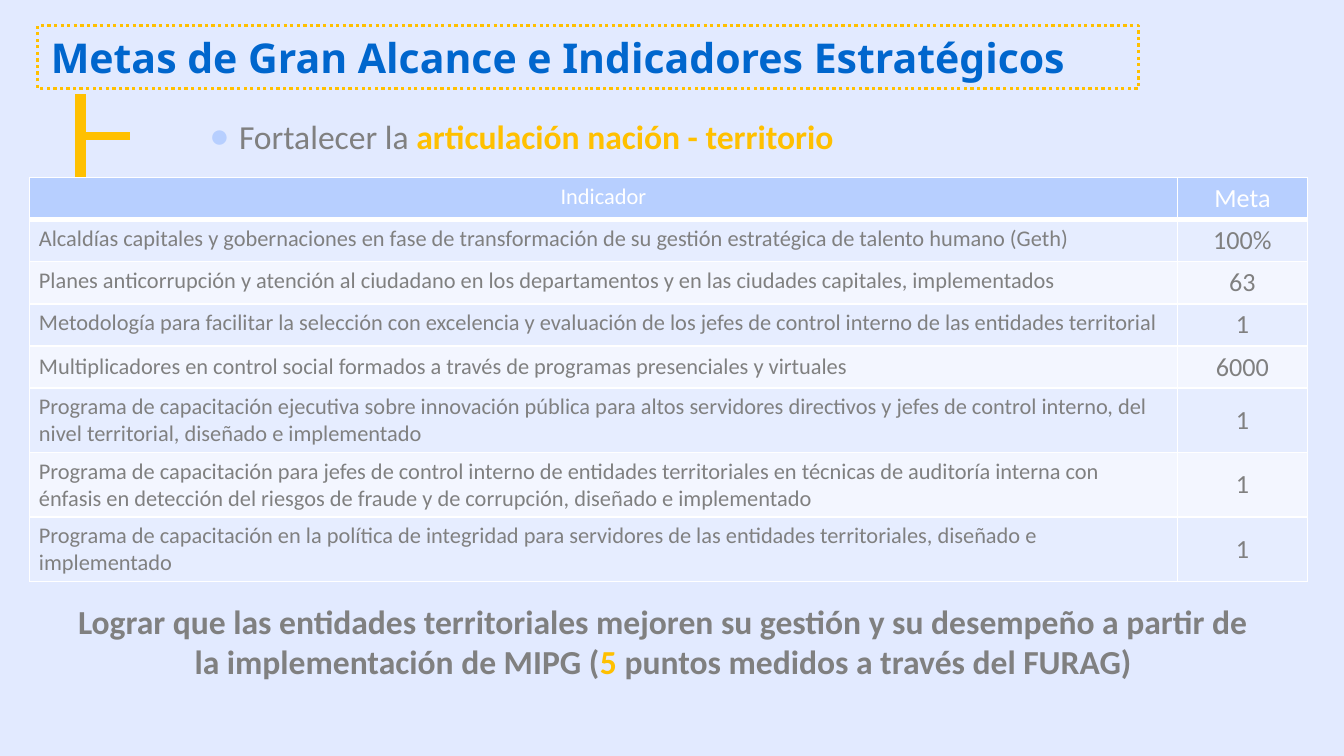
from lxml.etree import SubElement
from pptx import Presentation
from pptx.dml.color import RGBColor
from pptx.enum.dml import MSO_LINE
from pptx.enum.shapes import MSO_CONNECTOR, MSO_SHAPE
from pptx.enum.text import MSO_ANCHOR, MSO_AUTO_SIZE, PP_ALIGN
from pptx.oxml.ns import qn
from pptx.util import Inches, Pt

BACKGROUND = RGBColor(0xE2, 0xEA, 0xFF)
HEADER = RGBColor(0xB7, 0xCF, 0xFF)
BANDS = (RGBColor(0xE6, 0xED, 0xFF), RGBColor(0xF3, 0xF6, 0xFF))
GOLD = RGBColor(0xFF, 0xC0, 0x00)
GRAY = RGBColor(0x80, 0x80, 0x80)
BLUE = RGBColor(0x00, 0x66, 0xCD)
WHITE = RGBColor(0xFF, 0xFF, 0xFF)

INDICATORS = [
    ("Alcaldías capitales y gobernaciones en fase de transformación de su gestión "
     "estratégica de talento humano (Geth)", "100%"),
    ("Planes anticorrupción y atención al ciudadano en los departamentos y en las "
     "ciudades capitales, implementados", "63"),
    ("Metodología para facilitar la selección con excelencia y evaluación de los "
     "jefes de control interno de las entidades territorial", "1"),
    ("Multiplicadores en control social formados a través de programas presenciales "
     "y virtuales", "6000"),
    ("Programa de capacitación ejecutiva sobre innovación pública para altos "
     "servidores directivos y jefes de control interno, del nivel territorial, "
     "diseñado e implementado", "1"),
    ("Programa de capacitación para jefes de control interno de entidades "
     "territoriales en técnicas de auditoría interna con énfasis en detección del "
     "riesgos de fraude y de corrupción, diseñado e implementado", "1"),
    ("Programa de capacitación en la política de integridad para servidores de las "
     "entidades territoriales, diseñado e implementado", "1"),
]


def grid(*cells):
    """Turn columns or rows of the grid, ten to the inch, into lengths."""
    return [Inches(cell / 10) for cell in cells]


class SlideBuilder:
    font = "Calibri"

    def __init__(self, slide):
        self.slide = slide
        slide.background.fill.solid()
        slide.background.fill.fore_color.rgb = BACKGROUND

    def add_runs(self, frame, runs, size, align, font=None):
        """Add (text, color, bold) runs to the first paragraph."""
        frame.word_wrap = True
        paragraph = frame.paragraphs[0]
        paragraph.alignment = align
        for text, color, bold in runs:
            run = paragraph.add_run()
            run.text = text
            run.font.name = font or self.font
            run.font.size = Pt(size)
            run.font.bold = bold
            run.font.color.rgb = color

    def text(self, area, runs, size):
        frame = self.slide.shapes.add_textbox(*grid(*area)).text_frame
        frame.auto_size = MSO_AUTO_SIZE.SHAPE_TO_FIT_TEXT
        self.add_runs(frame, runs, size, PP_ALIGN.CENTER)

    def box(self, area, runs, size, font=None, fill=None, outline=None):
        shape = self.slide.shapes.add_shape(MSO_SHAPE.RECTANGLE, *grid(*area))
        shape.shadow.inherit = False
        if fill is None:
            shape.fill.background()
        else:
            shape.fill.solid()
            shape.fill.fore_color.rgb = fill
        if outline is None:
            shape.line.fill.background()
        else:
            shape.line.color.rgb = outline
            shape.line.width = Pt(1.75)
            shape.line.dash_style = MSO_LINE.ROUND_DOT
        shape.text_frame.auto_size = MSO_AUTO_SIZE.SHAPE_TO_FIT_TEXT
        self.add_runs(shape.text_frame, runs, size, PP_ALIGN.JUSTIFY, font)
        return shape

    def bullet(self, shape, color):
        properties = shape.text_frame.paragraphs[0]._p.get_or_add_pPr()
        properties.set("marL", str(Inches(0.71)))
        properties.set("indent", str(-Inches(0.22)))
        bullet_color = SubElement(properties, qn("a:buClr"))
        SubElement(bullet_color, qn("a:srgbClr"), val=str(color))
        SubElement(properties, qn("a:buFont"), typeface="Arial")
        SubElement(properties, qn("a:buChar"), char="●")

    def line(self, start, end, width, target=None):
        connector = self.slide.shapes.add_connector(
            MSO_CONNECTOR.STRAIGHT, *grid(*start, *end))
        connector.line.color.rgb = GOLD
        connector.line.width = Pt(width)
        SubElement(connector._element.spPr, qn("a:effectLst"))
        if target is not None:
            connector.end_connect(target, 1)

    def cell(self, cell, text, size, color, fill, align, anchor, bottom=1):
        cell.margin_left = cell.margin_right = Inches(0.07)
        cell.margin_top = cell.margin_bottom = Inches(0.04)
        cell.vertical_anchor = anchor
        properties = cell._tc.get_or_add_tcPr()
        for side, width in (("L", 1), ("R", 1), ("T", 1), ("B", bottom)):
            border = SubElement(properties, qn(f"a:ln{side}"), w=str(Pt(width)))
            border_fill = SubElement(border, qn("a:solidFill"))
            SubElement(border_fill, qn("a:srgbClr"), val=str(WHITE))
        cell.fill.solid()
        cell.fill.fore_color.rgb = fill
        self.add_runs(cell.text_frame, [(text, color, False)], size, align)

    def table(self, area, columns, rows, records):
        table = self.slide.shapes.add_table(
            len(rows), len(columns), *grid(*area)).table
        for column, width in zip(table.columns, grid(*columns)):
            column.width = width
        for row, height in zip(table.rows, grid(*rows)):
            row.height = height
        for index, record in enumerate(records):
            header = index == 0
            for column, (text, size) in enumerate(zip(record, (12, 14))):
                self.cell(
                    table.cell(index, column), text, size,
                    color=WHITE if header else GRAY,
                    fill=HEADER if header else BANDS[(index - 1) % 2],
                    align=PP_ALIGN.CENTER if header or column else PP_ALIGN.LEFT,
                    anchor=MSO_ANCHOR.TOP if index < 4 else MSO_ANCHOR.MIDDLE,
                    bottom=3 if header else 1)


def main():
    presentation = Presentation()
    presentation.slide_width, presentation.slide_height = grid(100, 56.25)
    builder = SlideBuilder(
        presentation.slides.add_slide(presentation.slide_layouts[6]))

    # Goal
    goal = builder.box(
        (9.7, 8.1, 61.5, 4),
        [("Fortalecer la ", GRAY, False),
         ("articulación nación - territorio", GOLD, True)],
        18, fill=BACKGROUND)
    builder.bullet(goal, HEADER)

    # Closing statement
    builder.text(
        (4.3, 44.2, 90.1, 7.1),
        [("Lograr que las entidades territoriales mejoren su gestión y su desempeño "
          "a partir de la implementación de MIPG (", GRAY, True),
         ("5 ", GOLD, True),
         ("puntos medidos a través del FURAG)", GRAY, True)], 18)

    # Branch from the title to the goal
    builder.line((6, 7), (6, 13.2), 6)
    builder.line((5.9, 10.1), (9.7, 10.1), 4.5, target=goal)

    # Indicators
    builder.table((2.2, 13.2, 95.1, 29.7), (85.4, 9.7), [3.1] * 5 + [4.75] * 3,
                  [("Indicador", "Meta")] + INDICATORS)

    # Title
    builder.box((2.8, 1.9, 81.9, 4.7),
                [("Metas de Gran Alcance e Indicadores Estratégicos", BLUE, True)],
                22, font="Noto Sans", outline=GOLD)

    presentation.save("out.pptx")


if __name__ == "__main__":
    main()
